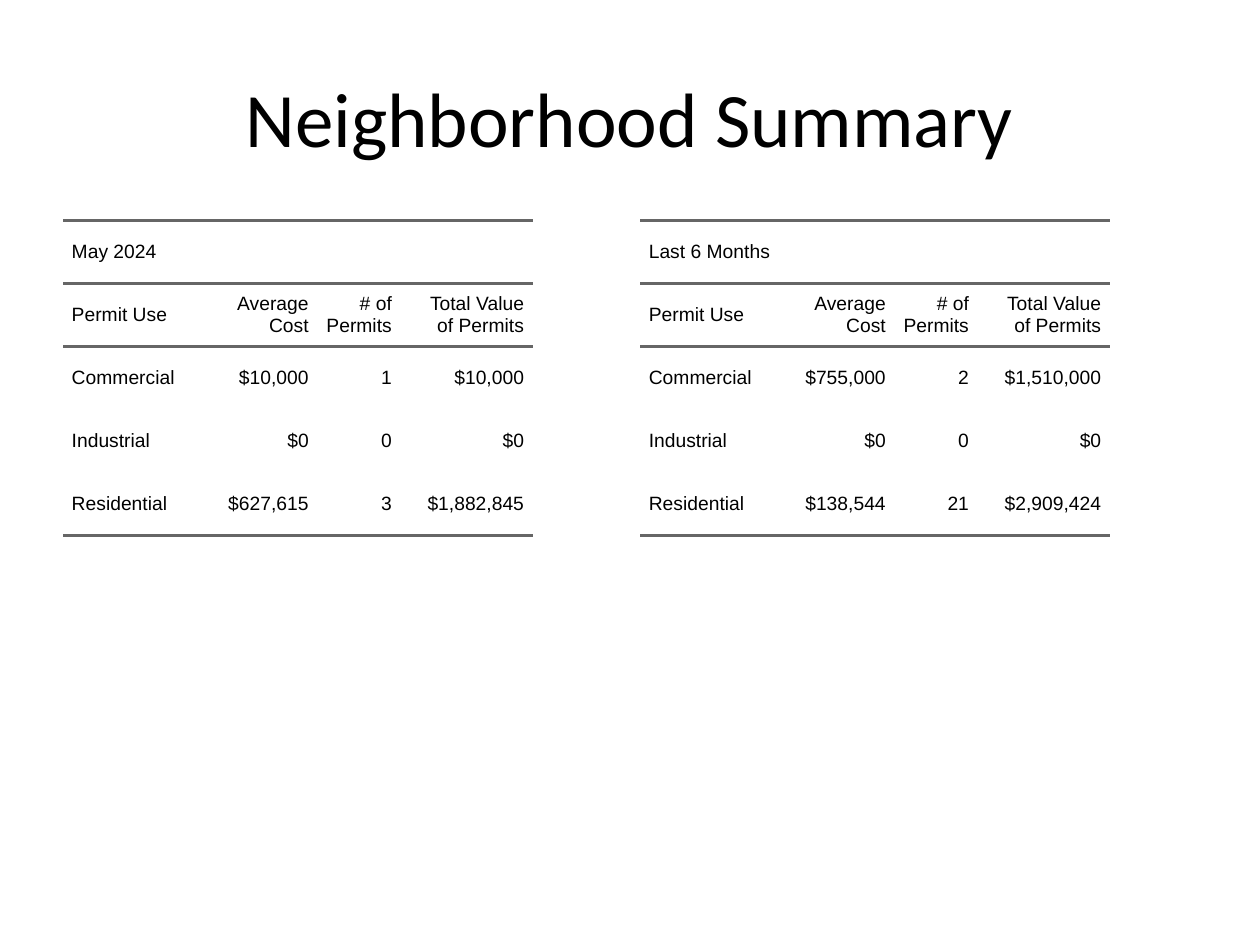
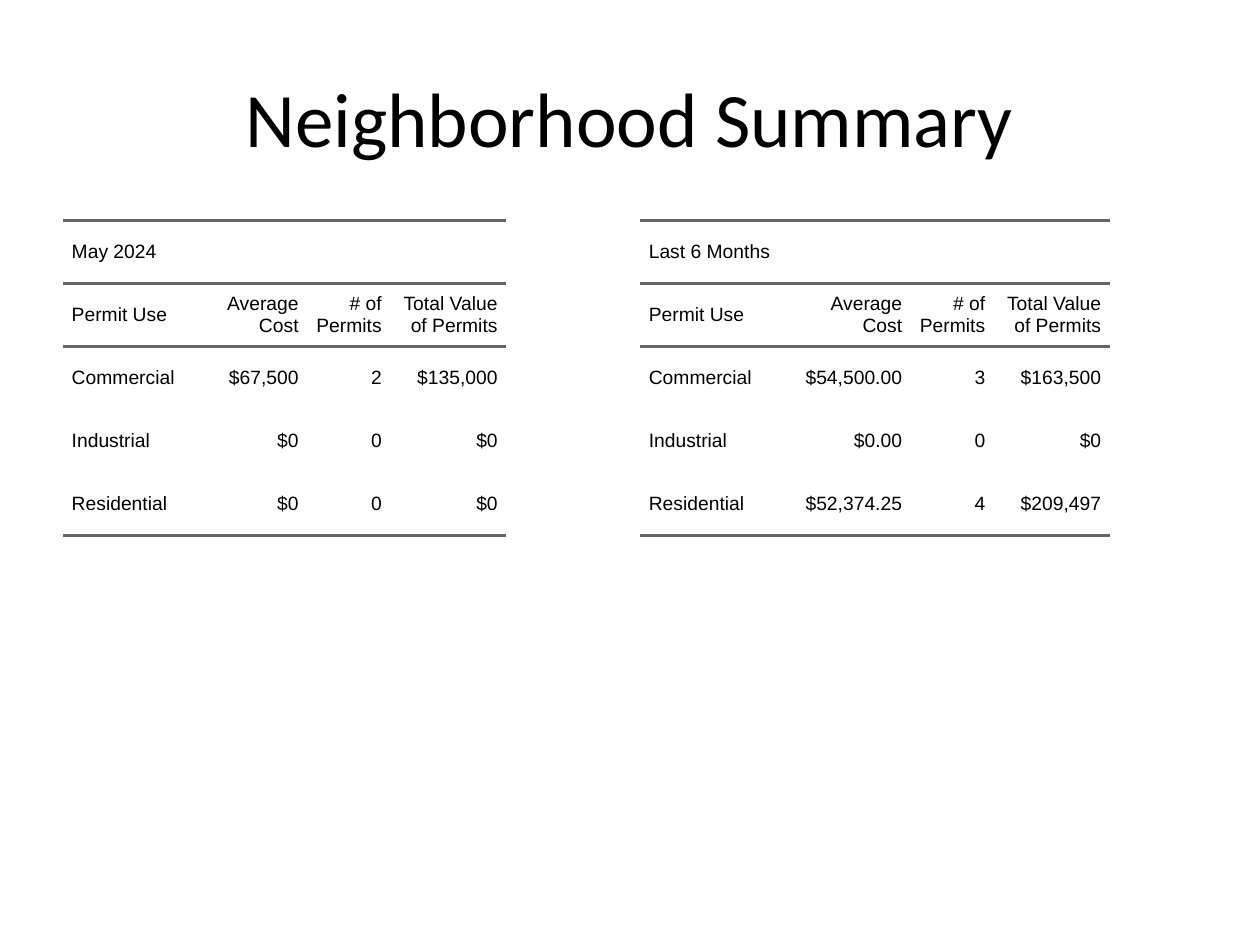
from dataclasses import dataclass

from lxml.etree import SubElement
from pptx import Presentation
from pptx.dml.color import RGBColor
from pptx.enum.text import MSO_ANCHOR, PP_ALIGN
from pptx.oxml.ns import qn
from pptx.slide import Slide
from pptx.table import _Cell
from pptx.text.text import _Paragraph
from pptx.util import Pt

# Shared look
BLACK = RGBColor(0x00, 0x00, 0x00)
RULE_GRAY = RGBColor(0x66, 0x66, 0x66)
TITLE_FONT, TITLE_SIZE = "Calibri", Pt(44)
TABLE_FONT, TABLE_SIZE = "Arial", Pt(11)
PLAIN_TABLE_STYLE = "{2D5ABB26-0587-4C30-8999-92F81FD0307C}"

# Shared layout
MARGIN = Pt(36)
TITLE_TOP, TITLE_WIDTH, TITLE_HEIGHT = Pt(21.6), Pt(648), Pt(90)
TABLE_TOP, TABLE_WIDTH, TABLE_HEIGHT = Pt(126), Pt(318.24), Pt(356.4)
TABLE_LEFTS = (MARGIN, Pt(365.76))
ROW_HEIGHT = Pt(36)
CELL_PADDING = Pt(5)
RULE_WIDTH = Pt(1.5)

# Shared wording
TITLE = "Neighborhood Summary"
HEADINGS = ("Permit Use", "Average Cost", "# of Permits", "Total Value of Permits")
PERMIT_USES = ("Commercial", "Industrial", "Residential")


@dataclass(frozen=True)
class PermitTable:
    period: str
    cost_width: float
    total_width: float
    figures: tuple[tuple[str, str, str], ...]

    @property
    def column_widths(self) -> tuple[float, ...]:
        return 79.2, self.cost_width, 47.52, self.total_width

    @property
    def rows(self) -> list[tuple[str, ...]]:
        body = [(use, *values) for use, values in zip(PERMIT_USES, self.figures)]
        return [(self.period, "", "", ""), HEADINGS, *body]


SLIDES = (
    (
        PermitTable("May 2024", 66.24, 75.6, (
            ("$10,000", "1", "$10,000"),
            ("$0", "0", "$0"),
            ("$627,615", "3", "$1,882,845"),
        )),
        PermitTable("Last 6 Months", 66.24, 75.6, (
            ("$755,000", "2", "$1,510,000"),
            ("$0", "0", "$0"),
            ("$138,544", "21", "$2,909,424"),
        )),
    ),
    (
        PermitTable("May 2024", 60.48, 66.24, (
            ("$67,500", "2", "$135,000"),
            ("$0", "0", "$0"),
            ("$0", "0", "$0"),
        )),
        PermitTable("Last 6 Months", 75.6, 66.24, (
            ("$54,500.00", "3", "$163,500"),
            ("$0.00", "0", "$0"),
            ("$52,374.25", "4", "$209,497"),
        )),
    ),
)


def add_text(paragraph: _Paragraph, text: str, font: str, size: Pt) -> None:
    run = paragraph.add_run()
    run.text = text
    run.font.name = font
    run.font.size = size
    run.font.color.rgb = BLACK


def add_title(slide: Slide) -> None:
    shape = slide.shapes.add_textbox(MARGIN, TITLE_TOP, TITLE_WIDTH, TITLE_HEIGHT)
    frame = shape.text_frame
    frame.word_wrap = True
    frame.vertical_anchor = MSO_ANCHOR.MIDDLE
    paragraph = frame.paragraphs[0]
    paragraph.alignment = PP_ALIGN.CENTER
    add_text(paragraph, TITLE, TITLE_FONT, TITLE_SIZE)


def add_rule(cell: _Cell, side: str) -> None:
    """Draw a horizontal rule on the top (lnT) or bottom (lnB) of a cell."""
    properties = cell._tc.get_or_add_tcPr()
    line = SubElement(properties, qn(f"a:{side}"), w=str(RULE_WIDTH))
    fill = SubElement(line, qn("a:solidFill"))
    SubElement(fill, qn("a:srgbClr"), val=str(RULE_GRAY))


def style_cell(cell: _Cell, row: int, column: int, last_row: int) -> None:
    # Rules frame the two heading rows and close the table
    if row < 2:
        add_rule(cell, "lnT")
    if row < 2 or row == last_row:
        add_rule(cell, "lnB")
    cell.fill.background()
    cell.vertical_anchor = MSO_ANCHOR.MIDDLE
    cell.margin_left = cell.margin_top = cell.margin_bottom = 0
    cell.margin_right = CELL_PADDING
    paragraph = cell.text_frame.paragraphs[0]
    paragraph.alignment = PP_ALIGN.RIGHT if column else PP_ALIGN.LEFT
    paragraph.space_before = paragraph.space_after = CELL_PADDING
    paragraph._p.get_or_add_pPr().set("marL", str(CELL_PADDING))


def add_permit_table(slide: Slide, left: int, permits: PermitTable) -> None:
    rows = permits.rows
    shape = slide.shapes.add_table(
        len(rows), len(HEADINGS), left, TABLE_TOP, TABLE_WIDTH, TABLE_HEIGHT)
    table = shape.table
    table.first_row = table.horz_banding = False
    table._tbl.tblPr.find(qn("a:tableStyleId")).text = PLAIN_TABLE_STYLE
    for column, width in zip(table.columns, permits.column_widths):
        column.width = Pt(width)
    for row in table.rows:
        row.height = ROW_HEIGHT
    shape.width, shape.height = TABLE_WIDTH, TABLE_HEIGHT

    # The period heading spans the full width
    table.cell(0, 0).merge(table.cell(0, len(HEADINGS) - 1))
    for row_index, texts in enumerate(rows):
        for column_index, text in enumerate(texts):
            cell = table.cell(row_index, column_index)
            style_cell(cell, row_index, column_index, len(rows) - 1)
            if text:
                add_text(cell.text_frame.paragraphs[0], text, TABLE_FONT, TABLE_SIZE)


def main() -> None:
    presentation = Presentation()
    presentation.slide_width, presentation.slide_height = Pt(720), Pt(540)
    blank_layout = presentation.slide_layouts[6]
    for permit_tables in SLIDES:
        slide = presentation.slides.add_slide(blank_layout)
        for left, permits in zip(TABLE_LEFTS, permit_tables):
            add_permit_table(slide, left, permits)
        add_title(slide)
    presentation.save("out.pptx")


if __name__ == "__main__":
    main()
